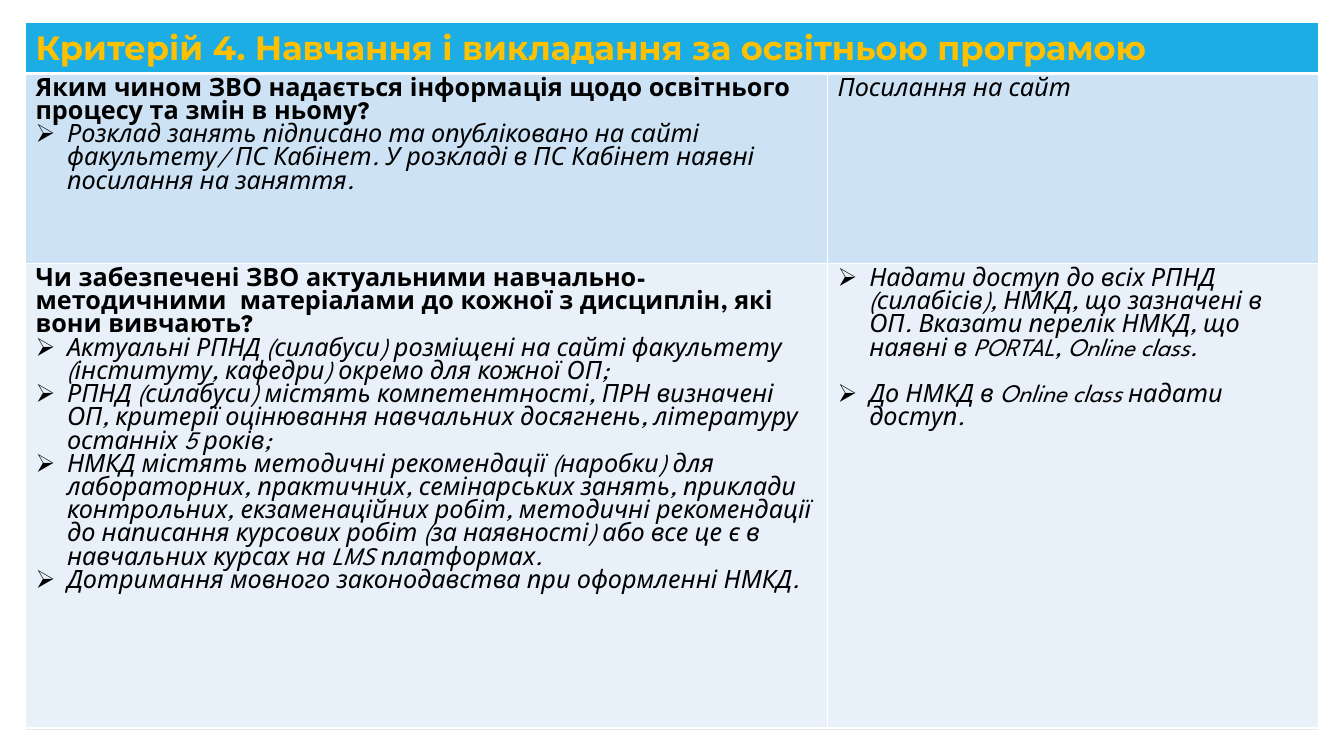
import pptx
import pptx.dml.color
import pptx.enum.shapes
import pptx.oxml
import pptx.oxml.ns
import pptx.util

Pt = pptx.util.Pt

TITLE = "Критерій 4. Навчання і викладання за освітньою програмою"
ROWS = [
    (
        [
            ("question", "Яким чином ЗВО надається інформація щодо освітнього процесу та змін в ньому?"),
            ("bullet", "Розклад занять підписано та опубліковано на сайті факультету/ ПС Кабінет. "
                       "У розкладі в ПС Кабінет наявні посилання на заняття."),
        ],
        [("note", "Посилання на сайт")],
    ),
    (
        [
            ("question", "Чи забезпечені ЗВО актуальними навчально-методичними  матеріалами "
                         "до кожної з дисциплін, які вони вивчають?"),
            ("bullet", "Актуальні РПНД (силабуси) розміщені на сайті факультету "
                       "(інституту, кафедри) окремо для кожної ОП;"),
            ("bullet", "РПНД (силабуси) містять компетентності, ПРН визначені ОП, критерії "
                       "оцінювання навчальних досягнень, літературу останніх 5 років;"),
            ("bullet", "НМКД містять методичні рекомендації (наробки) для лабораторних, практичних, "
                       "семінарських занять, приклади контрольних, екзаменаційних робіт, методичні "
                       "рекомендації до написання курсових робіт (за наявності) або все це є в "
                       "навчальних курсах на LMS платформах."),
            ("bullet", "Дотримання мовного законодавства при оформленні НМКД."),
        ],
        [
            ("bullet", "Надати доступ до всіх РПНД (силабісів), НМКД, що зазначені в ОП. "
                       "Вказати перелік НМКД, що наявні в PORTAL, Online class."),
            ("spaced bullet", "До НМКД в Online class надати доступ."),
        ],
    ),
]

THEME = {
    "title_font": "Montserrat", "body_font": "League Spartan",
    "title_size": 24, "body_size": 18,
    "title": "FFC000", "body": "000000", "border": "FFFFFF",
    "backdrop": "E3DED1", "header": "1CADE4", "bands": ["CDE3F5", "E8F1FA"],
}
STYLES = {
    "question": {"bold": True},
    "note": {"italic": True},
    "bullet": {"italic": True, "bullet": "➢"},
    "spaced bullet": {"italic": True, "bullet": "➢", "before": 16.5},
}
SLIDE = (960, 540)
BACKDROP = (18.72, 18.72, 923.04, 502.56)
TABLE_AT = (18.2, 16)
COLUMNS = [573, 350.5]
HEIGHTS = [36.5, 136, 331.5]
INDENT = 22.5
THIN, THICK = 1, 3


def rgb(value):
    return pptx.dml.color.RGBColor.from_string(value)


def paint(obj, color):
    obj.fill.solid()
    obj.fill.fore_color.rgb = rgb(color)


def write(p, text, *, font=THEME["body_font"], size=THEME["body_size"], color=THEME["body"],
          bold=False, italic=False, bullet=None, before=0):
    r = p.add_run()
    r.text = text
    r.font.name = font
    r.font.size = Pt(size)
    r.font.bold = bold
    r.font.italic = italic
    r.font.color.rgb = rgb(color)
    p.space_before = Pt(before)
    if bullet:
        pPr = p._p.get_or_add_pPr()
        pPr.set("marL", str(Pt(INDENT)))
        pPr.set("indent", str(-Pt(INDENT)))
        pPr.append(pptx.oxml.parse_xml(
            f'<a:buChar {pptx.oxml.ns.nsdecls("a")} char="{bullet}"/>'))


def set_borders(cell, top, bottom):
    tcPr = cell._tc.get_or_add_tcPr()
    for i, (side, width) in enumerate([("L", THIN), ("R", THIN), ("T", top), ("B", bottom)]):
        tcPr.insert(i, pptx.oxml.parse_xml(
            f'<a:ln{side} {pptx.oxml.ns.nsdecls("a")} w="{Pt(width)}"><a:solidFill>'
            f'<a:srgbClr val="{THEME["border"]}"/></a:solidFill></a:ln{side}>'))


def fill_cell(cell, items):
    tf = cell.text_frame
    for i, (style, text) in enumerate(items):
        p = tf.add_paragraph() if i else tf.paragraphs[0]
        write(p, text, **STYLES[style])


def main():
    prs = pptx.Presentation()
    prs.slide_width, prs.slide_height = map(Pt, SLIDE)
    s = prs.slides.add_slide(prs.slide_layouts[6])

    sp = s.shapes.add_shape(pptx.enum.shapes.MSO_SHAPE.RECTANGLE, *map(Pt, BACKDROP))
    sp.shadow.inherit = False
    sp.line.fill.background()
    paint(sp, THEME["backdrop"])

    table = s.shapes.add_table(len(HEIGHTS), len(COLUMNS), *map(Pt, TABLE_AT),
                               Pt(sum(COLUMNS)), Pt(sum(HEIGHTS))).table
    table.first_row = table.horz_banding = False
    for column, width in zip(table.columns, COLUMNS):
        column.width = Pt(width)
    for row, height in zip(table.rows, HEIGHTS):
        row.height = Pt(height)

    for i, color in enumerate([THEME["header"], *THEME["bands"]]):
        for cell in table.rows[i].cells:
            set_borders(cell, THICK if i == 1 else THIN, THICK if i == 0 else THIN)
            paint(cell, color)

    header = table.cell(0, 0)
    header.merge(table.cell(0, len(COLUMNS) - 1))
    write(header.text_frame.paragraphs[0], TITLE, font=THEME["title_font"],
          size=THEME["title_size"], color=THEME["title"], bold=True)
    for i, row in enumerate(ROWS, 1):
        for j, items in enumerate(row):
            fill_cell(table.cell(i, j), items)

    prs.save("out.pptx")


if __name__ == "__main__":
    main()
